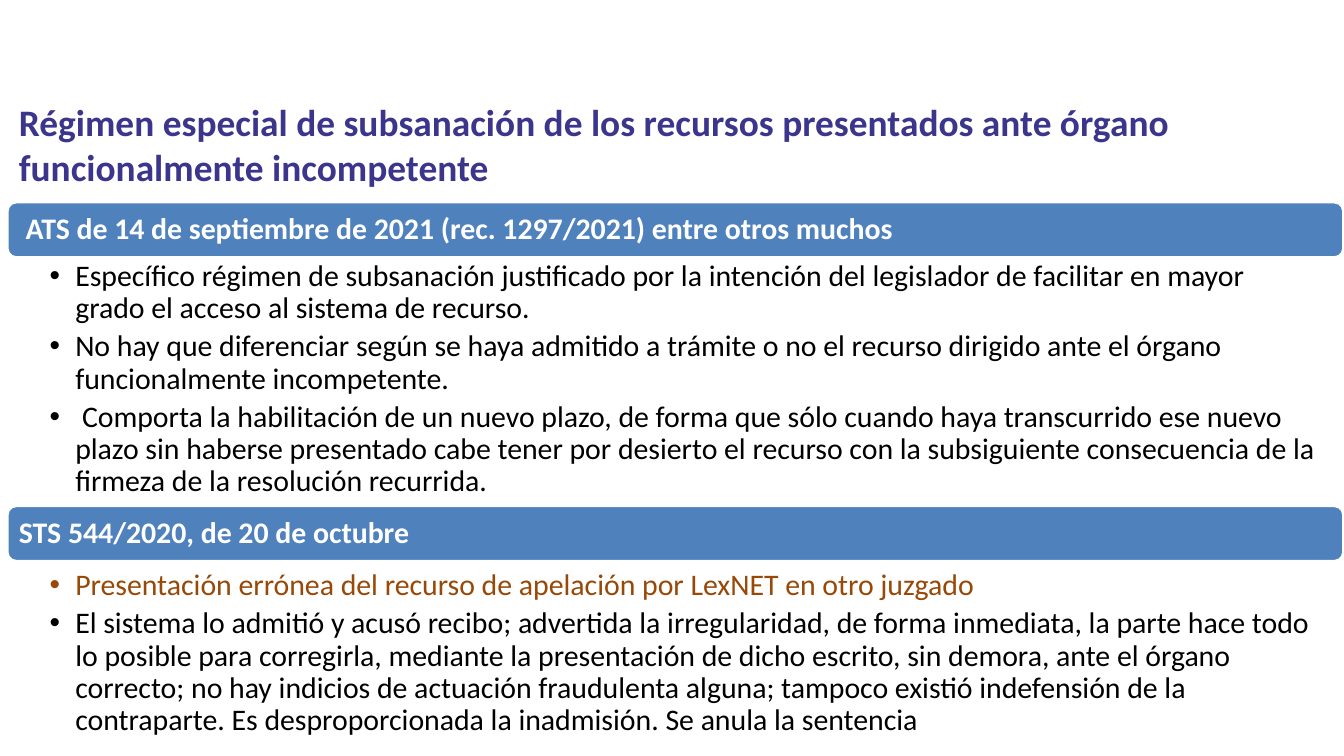
import pptx
import pptx.util
import pptx.dml.color
import pptx.enum.shapes
import pptx.enum.text
import pptx.oxml
from pptx.util import Inches, Pt

COLORS = {"title": "3B358C", "bar": "4F81BD", "white": "FFFFFF",
          "black": "000000", "brown": "984807"}
FONT = "Calibri"

# Each section: header, header top, list top, list height, points with colours
SECTIONS = [
    (" ATS de 14 de septiembre de 2021 (rec. 1297/2021) entre otros muchos",
     1.5, 1.92, 1.88, [
         ("Específico régimen de subsanación justificado por la intención del "
          "legislador de facilitar en mayor grado el acceso al sistema de recurso.",
          "black"),
         ("No hay que diferenciar según se haya admitido a trámite o no el recurso "
          "dirigido ante el órgano funcionalmente incompetente.", "black"),
         (" Comporta la habilitación de un nuevo plazo, de forma que sólo cuando "
          "haya transcurrido ese nuevo plazo sin haberse presentado cabe tener por "
          "desierto el recurso con la subsiguiente consecuencia de la firmeza de la "
          "resolución recurrida.", "black"),
     ]),
    ("STS 544/2020, de 20 de octubre", 3.76, 4.22, 1.32, [
        ("Presentación errónea del recurso de apelación por LexNET en otro juzgado",
         "brown"),
        ("El sistema lo admitió y acusó recibo; advertida la irregularidad, de forma "
         "inmediata, la parte hace todo lo posible para corregirla, mediante la "
         "presentación de dicho escrito, sin demora, ante el órgano correcto; no hay "
         "indicios de actuación fraudulenta alguna; tampoco existió indefensión de "
         "la contraparte. Es desproporcionada la inadmisión. Se anula la sentencia",
         "black"),
    ]),
]


def rgb(name):
    return pptx.dml.color.RGBColor.from_string(COLORS[name])


def place(shape, left, top, width, height):
    shape.left, shape.top = Inches(left), Inches(top)
    shape.width, shape.height = Inches(width), Inches(height)


def set_frame(frame, anchor, left, top, right, bottom):
    frame.word_wrap = True
    frame.auto_size = pptx.enum.text.MSO_AUTO_SIZE.NONE
    frame.vertical_anchor = anchor
    frame.margin_left, frame.margin_top = Inches(left), Inches(top)
    frame.margin_right, frame.margin_bottom = Inches(right), Inches(bottom)


def add_run(paragraph, text, size, color, bold=False):
    paragraph.alignment = pptx.enum.text.PP_ALIGN.LEFT
    run = paragraph.add_run()
    run.text = text
    run.font.name, run.font.size, run.font.bold = FONT, Pt(size), bold
    run.font.color.rgb = rgb(color)


def add_bullet(paragraph, indent):
    properties = paragraph._p.get_or_add_pPr()
    properties.set("marL", str(Inches(indent)))
    properties.set("indent", str(-Inches(indent)))
    bullet = pptx.oxml.parse_xml(
        '<a:buChar xmlns:a="http://schemas.openxmlformats.org/drawingml/2006/main"'
        ' char="•"/>')
    properties.append(bullet)


def fill_title(title, left, top, width, height):
    place(title, left, top, width, height)
    set_frame(title.text_frame, pptx.enum.text.MSO_ANCHOR.TOP, 0.1, 0.05, 0.1, 0.05)
    add_run(title.text_frame.paragraphs[0],
            "Régimen especial de subsanación de los recursos presentados ante "
            "órgano funcionalmente incompetente", 20, "title", True)


def add_header(slide, text, left, top, width, height):
    header = slide.shapes.add_shape(
        pptx.enum.shapes.MSO_SHAPE.ROUNDED_RECTANGLE,
        Inches(left), Inches(top), Inches(width), Inches(height))
    header.shadow.inherit = False
    header.fill.solid()
    header.fill.fore_color.rgb = rgb("bar")
    header.line.color.rgb = rgb("white")
    header.line.width = Pt(2)
    set_frame(header.text_frame, pptx.enum.text.MSO_ANCHOR.MIDDLE,
              0.07, 0.07, 0.07, 0.07)
    paragraph = header.text_frame.paragraphs[0]
    paragraph.line_spacing = 0.9
    add_run(paragraph, text, 16, "white", True)


def fill_points(body, points, left, top, width, height):
    place(body, left, top, width, height)
    frame = body.text_frame
    set_frame(frame, pptx.enum.text.MSO_ANCHOR.TOP, 0.32, 0.02, 0.19, 0.02)
    for number, (text, color) in enumerate(points):
        paragraph = frame.add_paragraph() if number else frame.paragraphs[0]
        add_bullet(paragraph, 0.19)
        paragraph.line_spacing = 0.9
        paragraph.space_before = Pt(0)
        paragraph.space_after = Pt(3.2)
        add_run(paragraph, text, 16, color)


def main():
    deck = pptx.Presentation()
    deck.slide_width = Inches(10)
    deck.slide_height = deck.slide_width * 9 // 16
    # The two-content layout gives one title and a body for each section
    slide = deck.slides.add_slide(deck.slide_layouts[3])
    fill_title(slide.shapes.title, 0.04, 0.69, 9, 0.94)
    bodies = [slide.placeholders[1], slide.placeholders[2]]
    left, width = 0.05, 9.95
    for body, section in zip(bodies, SECTIONS):
        header, header_top, list_top, list_height, points = section
        add_header(slide, header, left, header_top, width, 0.42)
        fill_points(body, points, left, list_top, width, list_height)
    deck.save("out.pptx")


if __name__ == "__main__":
    main()
